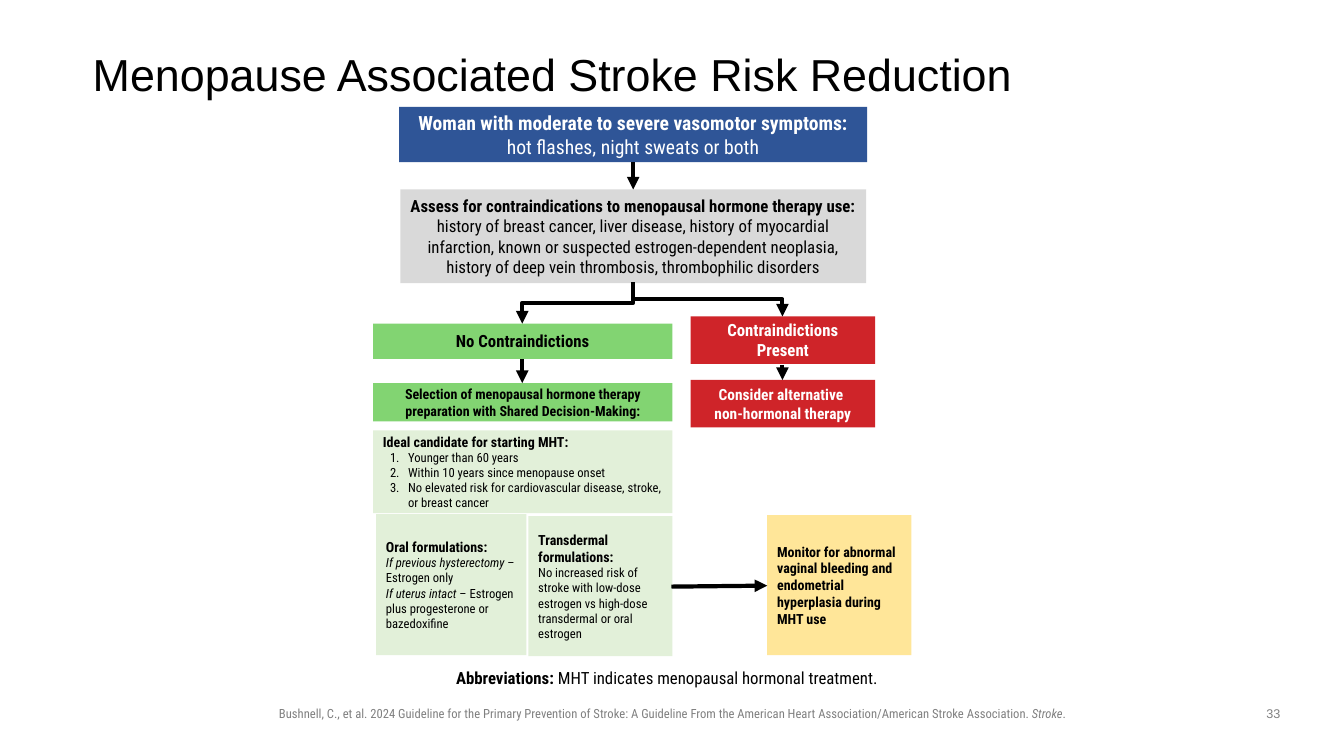
"""Build the menopause stroke risk reduction flowchart slide."""
import pptx
import pptx.dml.color
import pptx.enum.shapes
import pptx.enum.text
import pptx.oxml.ns
import pptx.util
from lxml import etree

Inches = pptx.util.Inches
CONDENSED = "Roboto Condensed"
BLACK, WHITE, GREY = "000000", "FFFFFF", "808080"
GREEN, PALE, RED = "82D472", "E2F0D9", "CF2429"

# Each paragraph: (size, [(text, style)]) with style letters b, i and n (numbered)
TITLE = [(32, [("Menopause Associated Stroke Risk Reduction", "")])]
ABBREVIATIONS = [(12, [("Abbreviations: ", "b"),
                       ("MHT indicates menopausal hormonal treatment.", "")])]
CITATION = [(9, [("Bushnell, C., et al. 2024 Guideline for the Primary Prevention of Stroke: "
                  "A Guideline From the American Heart Association/American Stroke "
                  "Association. ", ""), ("Stroke", "i"), (".", "")])]
PAGE = [(9, [("33", "")])]

CENTRED_BOXES = [
    ((3.96, 1.06, 4.64, 0.55), "2F5597", WHITE, [
        (14, [("Woman with moderate to severe vasomotor symptoms: ", "b"),
              ("hot flashes, night sweats or both", "")])]),
    ((3.97, 1.88, 4.62, 0.93), "D9D9D9", BLACK, [
        (12, [("Assess for contraindications to menopausal hormone therapy use: ", "b"),
              ("history of breast cancer, liver disease, history of myocardial infarction, "
               "known or suspected estrogen-dependent neoplasia, history of deep vein "
               "thrombosis, thrombophilic disorders", "")])]),
    ((3.7, 3.21, 2.97, 0.35), GREEN, BLACK, [(12, [("No Contraindictions", "b")])]),
    ((6.85, 3.14, 1.83, 0.47), RED, WHITE, [(12, [("Contraindictions Present", "b")])]),
    ((3.7, 3.8, 2.97, 0.38), GREEN, BLACK, [
        (10, [("Selection of menopausal hormone therapy preparation with "
               "Shared Decision-Making:", "b")])]),
    ((6.85, 3.77, 1.83, 0.47), RED, WHITE, [
        (11, [("Consider alternative \nnon-hormonal therapy", "b")])]),
]
LEFT_BOXES = [
    ((3.7, 4.27, 2.97, 0.82), PALE, BLACK, [
        (10, [("Ideal candidate for starting MHT:", "b")]),
        (9, [("Younger than 60 years", "n")]),
        (9, [("Within 10 years since menopause onset", "n")]),
        (9, [("No elevated risk for cardiovascular disease, stroke, or breast cancer", "n")])]),
    ((3.73, 5.1, 1.49, 1.4), PALE, BLACK, [
        (10, [("Oral formulations:", "b")]),
        (9, [("If previous hysterectomy ", "i"), ("– Estrogen only", "")]),
        (9, [("If uterus intact ", "i"),
             ("– Estrogen plus progesterone or bazedoxifine", "")])]),
    ((5.24, 5.12, 1.43, 1.39), PALE, BLACK, [
        (10, [("Transdermal formulations:", "b")]),
        (9, [("No increased risk of stroke with low-dose estrogen vs high-dose "
              "transdermal or oral estrogen", "")])]),
    ((7.61, 5.11, 1.43, 1.39), "FFE699", BLACK, [
        (10, [("Monitor for abnormal vaginal bleeding and endometrial hyperplasia "
               "during MHT use", "b")])]),
]
STRAIGHT_ARROWS = [
    (6.28, 1.61, 6.28, 1.88),
    (5.18, 3.56, 5.18, 3.8),
    (7.76, 3.62, 7.76, 3.77),
    (6.66, 5.82, 7.61, 5.81),
]
BRANCH_ARROWS = [(6.28, 2.8, 5.18, 3.21), (6.28, 2.8, 7.76, 3.14)]


def rgb(value):
    return pptx.dml.color.RGBColor.from_string(value)


def add_xml(parent, tag, **attributes):
    return etree.SubElement(parent, pptx.oxml.ns.qn(tag), attributes)


def write(sp, paragraphs, color=BLACK, font=CONDENSED, align="CENTER", anchor="MIDDLE",
          spacing=None, insets=(0.1, 0.05, 0.1, 0.05)):
    tf = sp.text_frame
    tf.word_wrap = True
    tf.vertical_anchor = getattr(pptx.enum.text.MSO_ANCHOR, anchor)
    tf.margin_left, tf.margin_top, tf.margin_right, tf.margin_bottom = map(Inches, insets)
    for i, (size, runs) in enumerate(paragraphs):
        p = tf.paragraphs[0] if i == 0 else tf.add_paragraph()
        p.alignment = getattr(pptx.enum.text.PP_ALIGN, align)
        if spacing:
            p.line_spacing = spacing
        if "n" in runs[0][1]:
            pPr = p._p.get_or_add_pPr()
            pPr.set("marL", str(Inches(0.25)))
            pPr.set("indent", str(Inches(-0.18)))
            add_xml(pPr, "a:buFont", typeface="+mj-lt")
            add_xml(pPr, "a:buAutoNum", type="arabicPeriod")
        for text, style in runs:
            for j, line in enumerate(text.split("\n")):
                if j:
                    p.add_line_break()
                r = p.add_run()
                r.text = line
                r.font.name = font
                r.font.size = pptx.util.Pt(size)
                r.font.bold = "b" in style
                r.font.italic = "i" in style
                r.font.color.rgb = rgb(color)


def add_text(s, at, paragraphs, **fmt):
    write(s.shapes.add_textbox(*map(Inches, at)), paragraphs, **fmt)


def add_box(s, at, fill, color, paragraphs, align):
    sp = s.shapes.add_shape(pptx.enum.shapes.MSO_SHAPE.RECTANGLE, *map(Inches, at))
    sp.shadow.inherit = False
    sp.fill.solid()
    sp.fill.fore_color.rgb = rgb(fill)
    sp.line.fill.background()
    write(sp, paragraphs, color=color, align=align)


def add_arrow(s, kind, ends):
    connector = s.shapes.add_connector(kind, *map(Inches, ends))
    connector.line.color.rgb = rgb(BLACK)
    connector.line.width = pptx.util.Pt(3)
    add_xml(connector.line._get_or_add_ln(), "a:tailEnd", type="triangle")
    add_xml(connector._element.spPr, "a:effectLst")
    return connector


def add_branch(s, x1, y1, x2, y2):
    cx, cy = (x1 + x2) / 2, (y1 + y2) / 2
    half_w, half_h = (y2 - y1) / 2, abs(x2 - x1) / 2
    side = 1 if x2 > x1 else -1
    connector = add_arrow(s, pptx.enum.shapes.MSO_CONNECTOR.ELBOW,
                          (cx + side * half_w, cy - half_h, cx - side * half_w, cy + half_h))
    connector._element.spPr.xfrm.set("rot", "16200000" if side > 0 else "5400000")


def main():
    prs = pptx.Presentation()
    prs.slide_width, prs.slide_height = Inches(13.33), Inches(7.5)
    s = prs.slides.add_slide(prs.slide_layouts[6])
    add_text(s, (2.36, 6.95, 8.62, 0.25), CITATION, color=GREY, anchor="TOP")
    add_text(s, (0.92, 0.4, 11.5, 0.72), TITLE, font="Arial", align="LEFT",
             spacing=0.9, insets=(0, 0, 0, 0))
    for align, boxes in (("CENTER", CENTRED_BOXES), ("LEFT", LEFT_BOXES)):
        for box in boxes:
            add_box(s, *box, align)
    for ends in STRAIGHT_ARROWS:
        add_arrow(s, pptx.enum.shapes.MSO_CONNECTOR.STRAIGHT, ends)
    for ends in BRANCH_ARROWS:
        add_branch(s, *ends)
    add_text(s, (1.88, 6.42, 9.57, 0.46), ABBREVIATIONS, anchor="BOTTOM",
             spacing=0.9, insets=(0, 0.05, 0.1, 0.05))
    add_text(s, (12.42, 6.95, 0.42, 0.26), PAGE, color=GREY, font="Arial", anchor="TOP")
    prs.save("out.pptx")


if __name__ == "__main__":
    main()
